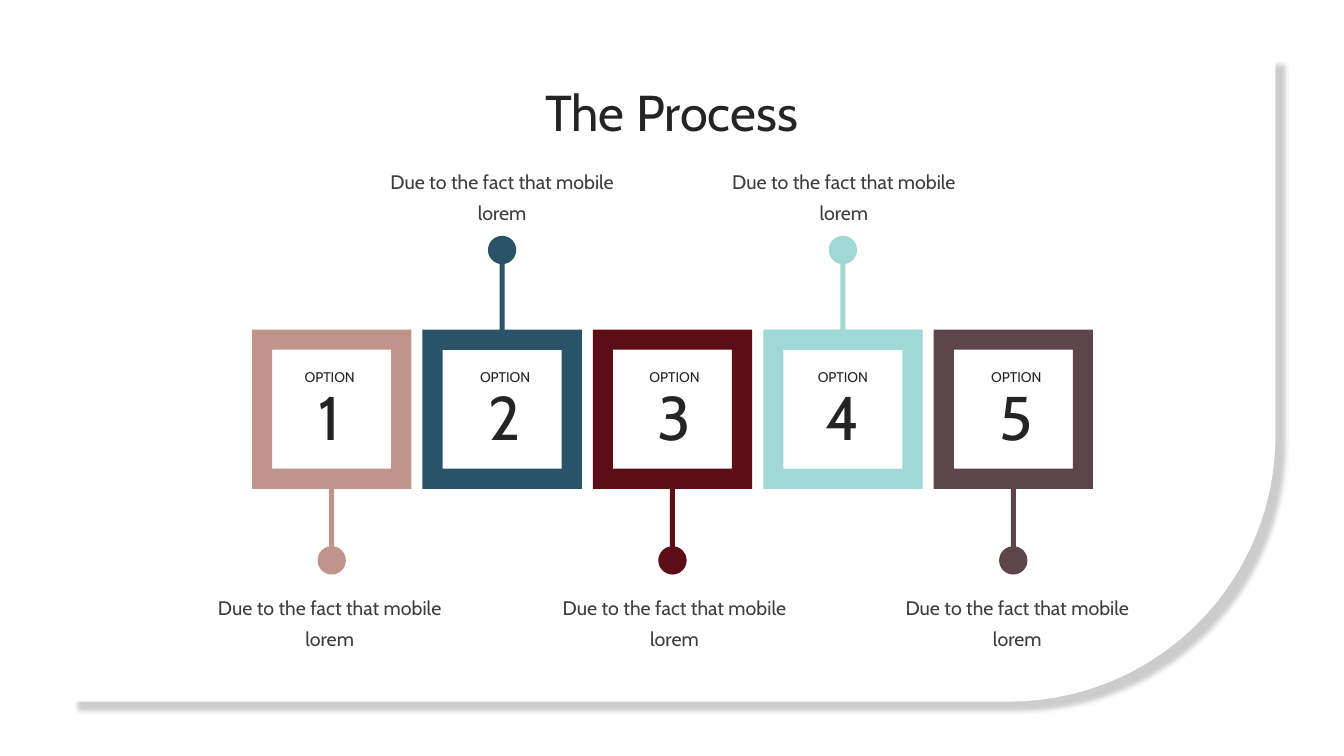
import math
from dataclasses import dataclass

from lxml import etree
from pptx import Presentation
from pptx import util as u
from pptx.dml.color import RGBColor
from pptx.enum import shapes, text
from pptx.oxml import ns

FONT = "Cabin"
WHITE = RGBColor(0xFF, 0xFF, 0xFF)
INK = RGBColor(0x24, 0x24, 0x25)
CAPTION_INK = RGBColor(0x3C, 0x3D, 0x3E)
ROSE = RGBColor(0xC1, 0x94, 0x8B)
NAVY = RGBColor(0x2A, 0x53, 0x6A)
MAROON = RGBColor(0x5D, 0x0D, 0x17)
AQUA = RGBColor(0xA0, 0xD8, 0xD5)
PLUM = RGBColor(0x5D, 0x45, 0x4B)

# Frame geometry, in inches
FIRST_CENTER, PITCH, MIDDLE = 3.29, 1.69, 4.06
OUTER_HALF, INNER_HALF = 0.79, 0.59
STEM_HALF, DOT_RADIUS, ARC_STEPS = 0.025, 0.14, 48
DOT_ABOVE, DOT_BELOW = 2.48, 5.56
CAPTION_ABOVE, CAPTION_BELOW = 1.56, 5.79


@dataclass
class Option:
    number: str
    color: RGBColor
    above: bool
    label_center: float
    caption_center: float


OPTIONS = [
    Option("1", ROSE, False, 3.27, 3.27),
    Option("2", NAVY, True, 5.01, 4.98),
    Option("3", MAROON, False, 6.69, 6.69),
    Option("4", AQUA, True, 8.36, 8.37),
    Option("5", PLUM, False, 10.08, 10.09),
]


def paint(shape, color: RGBColor) -> None:
    shape.fill.solid()
    shape.fill.fore_color.rgb = color
    shape.line.fill.background()
    shape.shadow.inherit = False


def add_card(slide) -> None:
    card = slide.shapes.add_shape(
        shapes.MSO_SHAPE.ROUND_2_DIAG_RECTANGLE,
        u.Inches(0.68), u.Inches(0.55), u.Inches(11.97), u.Inches(6.41))
    card.adjustments[0] = 0.412
    card.adjustments[1] = 0
    paint(card, WHITE)
    effects = card._element.spPr.find(ns.qn("a:effectLst"))
    shadow = etree.SubElement(
        effects, ns.qn("a:outerShdw"), blurRad=str(u.Pt(2)),
        dist=str(u.Pt(10)), dir="2700000", algn="tl", rotWithShape="0")
    tint = etree.SubElement(shadow, ns.qn("a:srgbClr"), val="000000")
    etree.SubElement(tint, ns.qn("a:alpha"), val="20000")


def to_emu(points: list[tuple[float, float]]) -> list[tuple[int, int]]:
    return [(u.Inches(x), u.Inches(y)) for x, y in points]


def add_frame(slide, option: Option, center: float) -> None:
    """Draw a hollow square with its stem and dot as one outline."""
    side = -1 if option.above else 1
    dot_y = DOT_ABOVE if option.above else DOT_BELOW
    far, near = MIDDLE - side * OUTER_HALF, MIDDLE + side * OUTER_HALF
    left, right = center - OUTER_HALF, center + OUTER_HALF

    start = math.asin(STEM_HALF / DOT_RADIUS)
    sweep = 2 * (math.pi - start)
    angles = [start + sweep * step / ARC_STEPS for step in range(ARC_STEPS + 1)]
    dot = [(center + DOT_RADIUS * math.sin(angle),
            dot_y - side * DOT_RADIUS * math.cos(angle)) for angle in angles]

    outline = to_emu([
        (left, far), (right, far), (right, near), (center + STEM_HALF, near),
        *dot, (center - STEM_HALF, near), (left, near)])
    hole = to_emu([(center + dx * INNER_HALF, MIDDLE + dy * side * INNER_HALF)
                   for dx, dy in ((-1, -1), (-1, 1), (1, 1), (1, -1))])

    builder = slide.shapes.build_freeform(*outline[0])
    builder.add_line_segments(outline[1:], close=True)
    builder.move_to(*hole[0])
    builder.add_line_segments(hole[1:], close=True)
    paint(builder.convert_to_shape(), option.color)


def add_text(slide, wording: str, center: float, top: float, width: float,
             height: float, size: float, color: RGBColor = INK,
             wrap: bool = False):
    box = slide.shapes.add_textbox(
        u.Inches(center - width / 2), u.Inches(top),
        u.Inches(width), u.Inches(height))
    frame = box.text_frame
    frame.text = wording
    frame.word_wrap = wrap
    frame.auto_size = text.MSO_AUTO_SIZE.SHAPE_TO_FIT_TEXT
    paragraph = frame.paragraphs[0]
    paragraph.alignment = text.PP_ALIGN.CENTER
    font = paragraph.runs[0].font
    font.name, font.size = FONT, u.Pt(size)
    font.color.rgb = color
    return frame


def add_option(slide, option: Option, center: float) -> None:
    add_frame(slide, option, center)
    add_text(slide, option.number, option.label_center, 3.71, 0.56, 0.84, 44)
    add_text(slide, "OPTION", option.label_center, 3.61, 0.74, 0.27, 10)
    top = CAPTION_ABOVE if option.above else CAPTION_BELOW
    caption = add_text(slide, "Due to the fact that mobile lorem",
                       option.caption_center, top, 2.42, 0.71, 14,
                       CAPTION_INK, wrap=True)
    caption.paragraphs[0].line_spacing = u.Pt(22.2)


def main() -> None:
    presentation = Presentation()
    presentation.slide_width = u.Inches(13.33)
    presentation.slide_height = u.Inches(7.5)
    slide = presentation.slides.add_slide(presentation.slide_layouts[6])

    # Background card
    add_card(slide)

    # Five options, alternating below and above
    for index, option in enumerate(OPTIONS):
        add_option(slide, option, FIRST_CENTER + index * PITCH)

    # Title
    title = add_text(slide, "The Process", 6.66, 0.8, 8.58, 0.61, 36, wrap=True)
    title.margin_left = title.margin_right = 0
    title.margin_top = title.margin_bottom = 0

    presentation.save("out.pptx")


if __name__ == "__main__":
    main()
